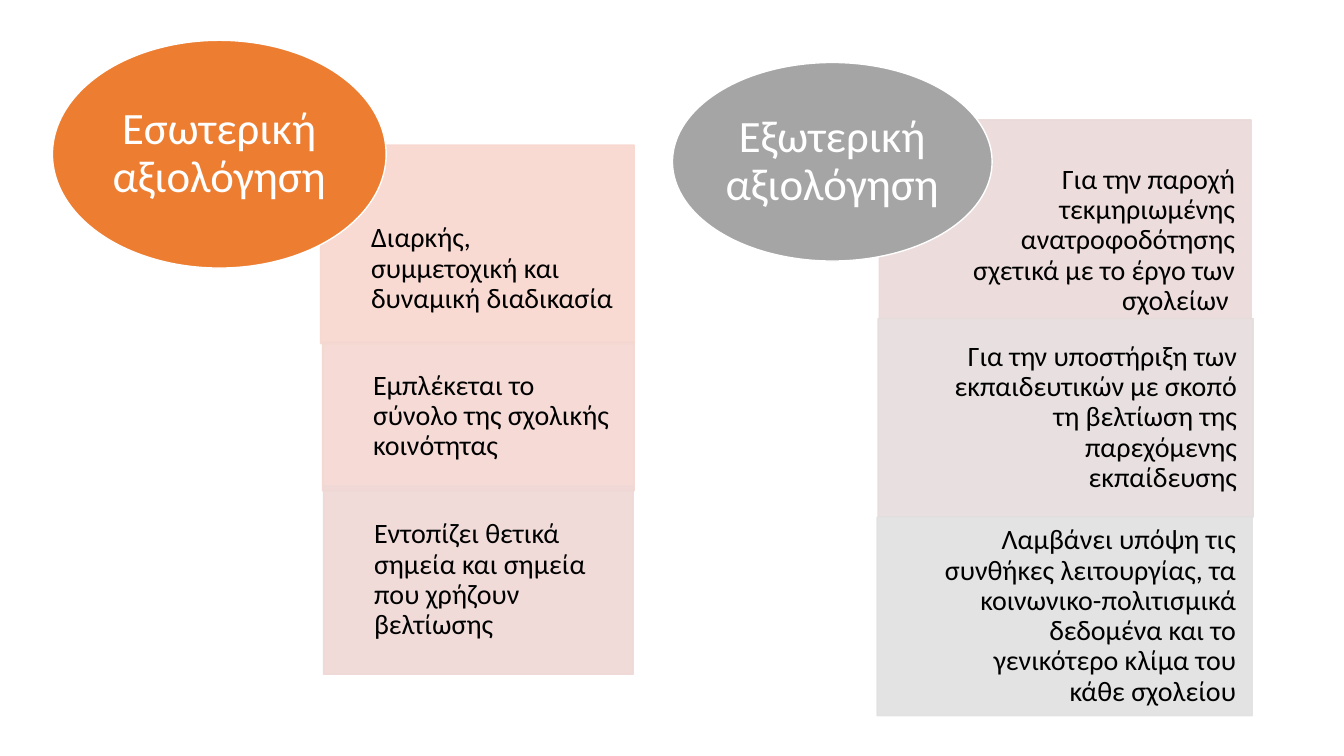
from lxml.etree import SubElement
from pptx import Presentation
from pptx.dml.color import RGBColor
from pptx.enum.shapes import MSO_SHAPE
from pptx.enum.text import MSO_ANCHOR, PP_ALIGN
from pptx.oxml.ns import qn
from pptx.util import Inches, Pt

# Content: each block is (box, fill, top and bottom inset, text)
GROUPS = [
    {
        "title": "Εσωτερική αξιολόγηση",
        "ellipse": (0.52, 0.4, 3.31, 2.26),
        "color": "ED7D31",
        "align": PP_ALIGN.LEFT,
        "indent": 0.5,
        "right": 0.16,
        "blocks": [
            ((3.18, 1.44, 3.11, 1.97), "F8D7CE", (0.68, 0.19),
             "Διαρκής, συμμετοχική και δυναμική διαδικασία"),
            ((3.2, 3.39, 3.09, 1.48), "F4D7D1", (0.16, 0.16),
             "Εμπλέκεται το σύνολο της σχολικής κοινότητας"),
            ((3.21, 4.82, 3.07, 1.87), "EFD8D5", (0.16, 0.16),
             "Εντοπίζει θετικά σημεία και σημεία που χρήζουν βελτίωσης"),
        ],
    },
    {
        "title": "Εξωτερική αξιολόγηση",
        "ellipse": (6.67, 0.62, 3.17, 1.97),
        "color": "A5A5A5",
        "align": PP_ALIGN.RIGHT,
        "indent": 0.59,
        "right": 0.16,
        "blocks": [
            ((8.72, 1.19, 3.69, 1.97), "EADAD9", (0.43, 0),
             "Για την παροχή τεκμηριωμένης ανατροφοδότησης σχετικά με το έργο των σχολείων "),
            ((8.71, 3.16, 3.72, 1.97), "E6DDDD", (0.16, 0.16),
             "Για την υποστήριξη των εκπαιδευτικών με σκοπό τη βελτίωση της παρεχόμενης εκπαίδευσης"),
            ((8.7, 5.13, 3.72, 1.97), "E1E1E1", (0.16, 0.16),
             "Λαμβάνει υπόψη τις συνθήκες λειτουργίας, τα κοινωνικο-πολιτισμικά δεδομένα "
             "και το γενικότερο κλίμα του κάθε σχολείου"),
        ],
    },
]
BLOCK_OPACITY = 90


def rgb(value):
    return RGBColor.from_string(value)


def set_attributes(target, values):
    for name, value in values.items():
        setattr(target, name, value)


def set_opacity(shape, percent):
    for color in shape._element.spPr.iter(qn("a:srgbClr")):
        SubElement(color, qn("a:alpha")).set("val", str(percent * 1000))


def add_label(slide, kind, box, fill, line, text, insets, align, size, color):
    shape = slide.shapes.add_shape(kind, *map(Inches, box))
    shape.shadow.inherit = False
    shape.fill.solid()
    shape.fill.fore_color.rgb = rgb(fill)
    shape.line.color.rgb = rgb(line)
    shape.line.width = Pt(1)
    left, top, right, bottom = map(Inches, insets)
    frame = shape.text_frame
    set_attributes(frame, {
        "word_wrap": True, "vertical_anchor": MSO_ANCHOR.MIDDLE,
        "margin_left": left, "margin_top": top,
        "margin_right": right, "margin_bottom": bottom,
    })
    paragraph = frame.paragraphs[0]
    set_attributes(paragraph, {"alignment": align, "line_spacing": 0.9})
    run = paragraph.add_run()
    run.text = text
    set_attributes(run.font, {"name": "Calibri", "size": Pt(size)})
    run.font.color.rgb = rgb(color)
    return shape


presentation = Presentation()
presentation.slide_width = Inches(13.33)
presentation.slide_height = Inches(7.5)
slide = presentation.slides.add_slide(presentation.slide_layouts[6])

for group in GROUPS:
    # Stacked description blocks
    for box, fill, (top, bottom), text in group["blocks"]:
        insets = (group["indent"], top, group["right"], bottom)
        block = add_label(slide, MSO_SHAPE.RECTANGLE, box, fill, fill, text,
                          insets, group["align"], 20, "000000")
        set_opacity(block, BLOCK_OPACITY)
    # Title ellipse over the blocks
    add_label(slide, MSO_SHAPE.OVAL, group["ellipse"], group["color"], "FFFFFF",
              group["title"], (0, 0, 0, 0), PP_ALIGN.CENTER, 32, "FFFFFF")

presentation.save("out.pptx")
